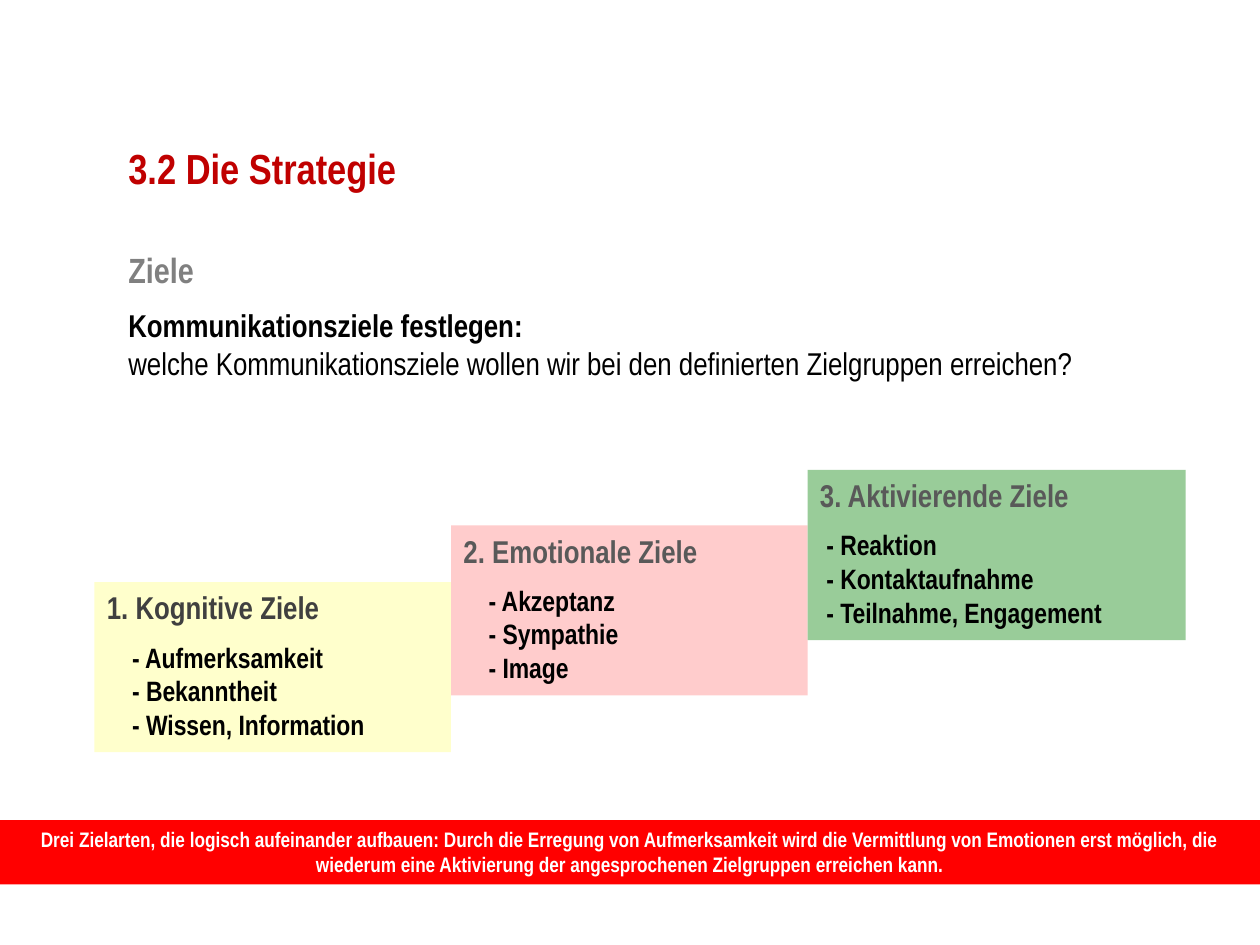
"""Build the slide on communication goals as three rising steps."""
from dataclasses import dataclass

from pptx import Presentation
from pptx.dml.color import RGBColor
from pptx.enum.shapes import MSO_SHAPE
from pptx.enum.text import MSO_ANCHOR, PP_ALIGN
from pptx.util import Inches, Pt

FONT = "Arial Narrow"
COLORS = {
    "title": "C00000", "subtitle": "808080", "text": "000000", "white": "FFFFFF",
    "dark": "404040", "gray": "595959", "yellow": "FFFFCC", "pink": "FFCCCC",
    "green": "99CC99", "red": "FF0000",
}


@dataclass
class Line:
    """A paragraph with its look."""
    text: str
    size: int
    color: str
    bold: bool = True
    before: float = 0
    indent: float = 0


@dataclass
class Step:
    """A goal type with its examples."""
    title: str
    items: list[str]
    fill: str
    color: str
    left: float
    top: float
    width: float
    indent: float


STEPS = [
    Step("2. Emotionale Ziele", ["Akzeptanz", "Sympathie", "Image"],
         "pink", "gray", 3.58, 4.17, 2.83, 0.2),
    Step("1. Kognitive Ziele", ["Aufmerksamkeit", "Bekanntheit", "Wissen, Information"],
         "yellow", "dark", 0.75, 4.62, 2.83, 0.2),
    Step("3. Aktivierende Ziele", ["Reaktion", "Kontaktaufnahme", "Teilnahme, Engagement"],
         "green", "gray", 6.41, 3.73, 3, 0.05),
]


def rgb(name: str) -> RGBColor:
    """Look up a colour."""
    return RGBColor.from_string(COLORS[name])


def write(sp, lines: list[Line], align=PP_ALIGN.LEFT) -> None:
    """Fill a shape with formatted paragraphs."""
    tf = sp.text_frame
    tf.word_wrap = True
    tf.vertical_anchor = MSO_ANCHOR.TOP
    for i, line in enumerate(lines):
        p = tf.add_paragraph() if i else tf.paragraphs[0]
        p.text = line.text
        p.alignment = align
        p.space_before = Pt(line.before)
        if line.indent:
            p._p.get_or_add_pPr().set("marL", str(Inches(line.indent)))
        for r in p.runs:
            r.font.name = FONT
            r.font.size = Pt(line.size)
            r.font.bold = line.bold
            r.font.color.rgb = rgb(line.color)


def add_text(s, left: float, top: float, width: float, height: float,
             lines: list[Line]) -> None:
    """Add a plain text box."""
    sp = s.shapes.add_textbox(Inches(left), Inches(top), Inches(width), Inches(height))
    write(sp, lines)


def add_box(s, left: float, top: float, width: float, height: float, fill: str,
            lines: list[Line], align=PP_ALIGN.LEFT) -> None:
    """Add a filled rectangle with text."""
    sp = s.shapes.add_shape(MSO_SHAPE.RECTANGLE, Inches(left), Inches(top),
                            Inches(width), Inches(height))
    sp.shadow.inherit = False
    sp.fill.solid()
    sp.fill.fore_color.rgb = rgb(fill)
    sp.line.fill.background()
    write(sp, lines, align)


def add_step(s, step: Step) -> None:
    """Add one goal type."""
    items = [Line(f"- {item}", 16, "text", before=0 if i else 8, indent=step.indent)
             for i, item in enumerate(step.items)]
    add_box(s, step.left, step.top, step.width, 1.35, step.fill,
            [Line(step.title, 18, step.color), *items])


def main() -> None:
    """Build and save the slide."""
    prs = Presentation()
    prs.slide_width, prs.slide_height = Inches(10), Inches(7.5)
    s = prs.slides.add_slide(prs.slide_layouts[6])
    add_text(s, 0.92, 1.92, 8.58, 1.5, [
        Line("Ziele", 20, "subtitle"),
        Line("Kommunikationsziele festlegen:", 18, "text", before=9),
        Line("welche Kommunikationsziele wollen wir bei den definierten "
             "Zielgruppen erreichen?", 18, "text", bold=False),
    ])
    add_text(s, 0.92, 1.08, 6.5, 0.5, [Line("3.2 Die Strategie", 24, "title")])
    for step in STEPS:
        add_step(s, step)
    add_box(s, 0, 6.51, 10, 0.51, "red", [
        Line("Drei Zielarten, die logisch aufeinander aufbauen: Durch die Erregung von "
             "Aufmerksamkeit wird die Vermittlung von Emotionen erst möglich, die wiederum "
             "eine Aktivierung der angesprochenen Zielgruppen erreichen kann.", 12, "white"),
    ], PP_ALIGN.CENTER)
    prs.save("out.pptx")


if __name__ == "__main__":
    main()
